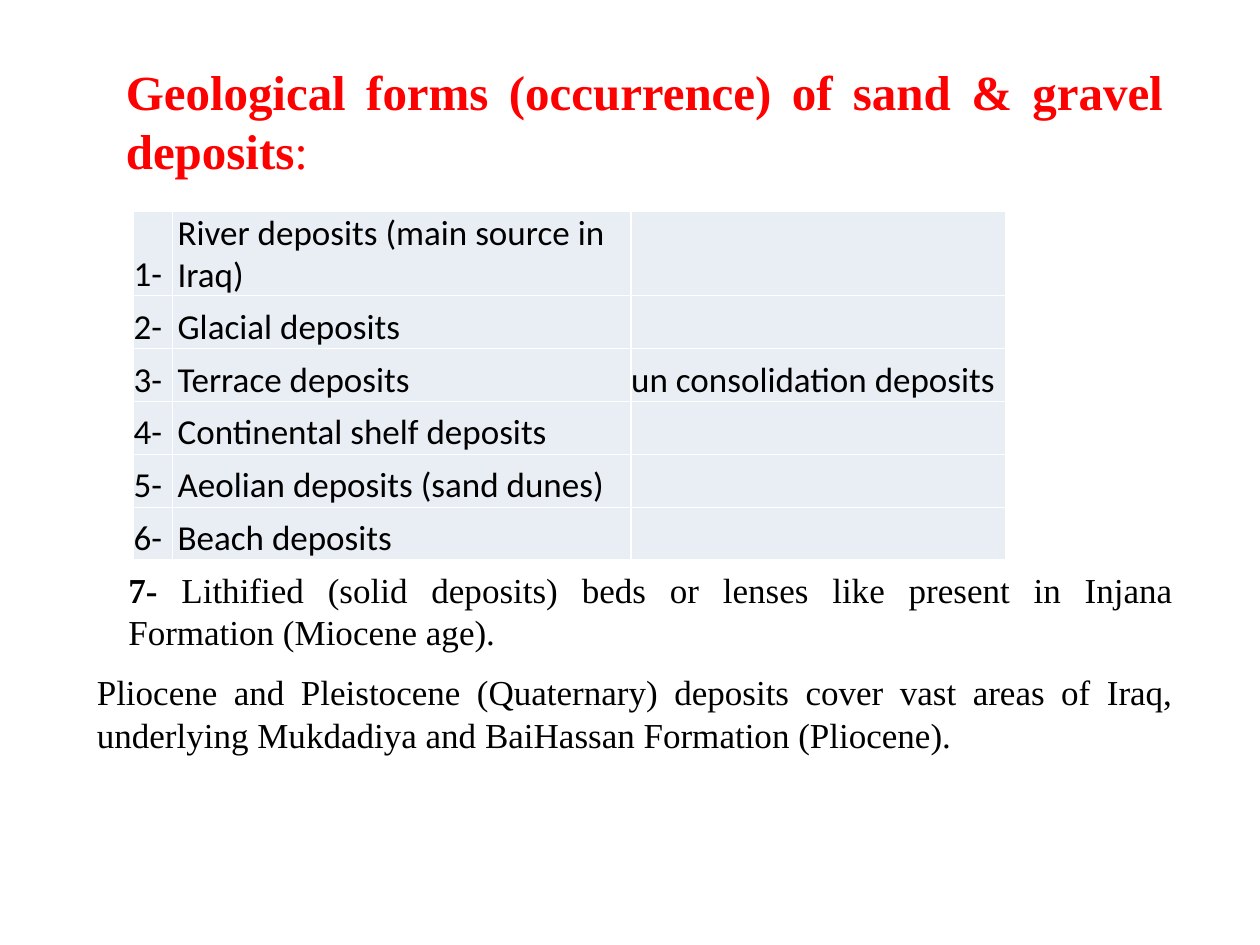
import pptx
import pptx.util
import pptx.dml.color
import pptx.enum.text
import pptx.oxml.ns
import lxml.etree

Inches = pptx.util.Inches
Pt = pptx.util.Pt

COLORS = {"title": "FF0000", "text": "000000", "cell": "E9EDF4", "rule": "FFFFFF"}
SERIF, SANS = "Times New Roman", "Calibri"


class Page:
    def __init__(self, deck):
        self.slide = deck.slides.add_slide(deck.slide_layouts[6])

    def color(self, name):
        return pptx.dml.color.RGBColor.from_string(COLORS[name])

    def style(self, para, face, size, color, indent=0):
        if indent:
            para._p.get_or_add_pPr().set("marL", str(Inches(indent)))
        para.font.name = face
        para.font.size = Pt(size)
        para.font.color.rgb = self.color(color)

    def text(self, box, paras, size, color):
        """Each paragraph is (indent, space before, line spacing, runs of (text, bold))."""
        frame = self.slide.shapes.add_textbox(*map(Inches, box)).text_frame
        frame.word_wrap = True
        for i, (indent, gap, lines, runs) in enumerate(paras):
            para = frame.add_paragraph() if i else frame.paragraphs[0]
            para.alignment = pptx.enum.text.PP_ALIGN.JUSTIFY
            para.line_spacing = lines
            para.space_before = Pt(gap)
            self.style(para, SERIF, size, color, indent)
            for words, bold in runs:
                run = para.add_run()
                run.text = words
                run.font.bold = bold

    def border(self, cell):
        props = cell._tc.get_or_add_tcPr()
        qn = pptx.oxml.ns.qn
        for side in ("lnL", "lnR", "lnT", "lnB"):
            line = lxml.etree.SubElement(props, qn("a:" + side), w=str(Pt(1)))
            fill = lxml.etree.SubElement(line, qn("a:solidFill"))
            lxml.etree.SubElement(fill, qn("a:srgbClr"), val=COLORS["rule"])

    def table(self, left, top, widths, height, rows, indents):
        size = (sum(widths), height * len(rows))
        table = self.slide.shapes.add_table(
            len(rows), len(widths), *map(Inches, (left, top, *size))).table
        table.first_row = table.horz_banding = False
        for col, width in zip(table.columns, widths):
            col.width = Inches(width)
        for r, row in enumerate(rows):
            for c, words in enumerate(row):
                cell = table.cell(r, c)
                cell.margin_left = cell.margin_right = 0
                cell.margin_top = cell.margin_bottom = 0
                cell.vertical_anchor = pptx.enum.text.MSO_ANCHOR.BOTTOM
                self.border(cell)
                cell.fill.solid()
                cell.fill.fore_color.rgb = self.color("cell")
                cell.text = words
                self.style(cell.text_frame.paragraphs[0], SANS, 20, "text", indents[c])


def main():
    deck = pptx.Presentation()
    deck.slide_width, deck.slide_height = Inches(10), Inches(7.5)
    page = Page(deck)

    # Title
    page.text((0.75, 0.44, 8.58, 1.1), [
        (0.15, 0, 1.0, [
            ("Geological forms (occurrence) of sand & gravel deposits", True),
            (":", False)]),
    ], 28, "title")

    # Numbered table of deposits; the note stands beside the third
    kinds = ["River deposits (main source in Iraq)", "Glacial deposits",
             "Terrace deposits", "Continental shelf deposits",
             "Aeolian deposits (sand dunes)", "Beach deposits"]
    notes = {3: "un consolidation deposits"}
    rows = [(f"{n}-", kind, notes.get(n, "")) for n, kind in enumerate(kinds, 1)]
    page.table(1.06, 1.68, (0.31, 3.64, 2.97), 0.42, rows, (0, 0.04, 0))

    # Closing text
    page.text((0.67, 4.46, 8.74, 1.6), [
        (0.25, 0, 1.0, [
            ("7- ", True),
            ("Lithified (solid deposits) beds or lenses like present in Injana "
             "Formation (Miocene age).", False)]),
        (0, 10, 1.02, [
            ("Pliocene and Pleistocene (Quaternary) deposits cover vast areas of Iraq, "
             "underlying Mukdadiya and BaiHassan Formation (Pliocene).", False)]),
    ], 20, "text")

    deck.save("out.pptx")


if __name__ == "__main__":
    main()
